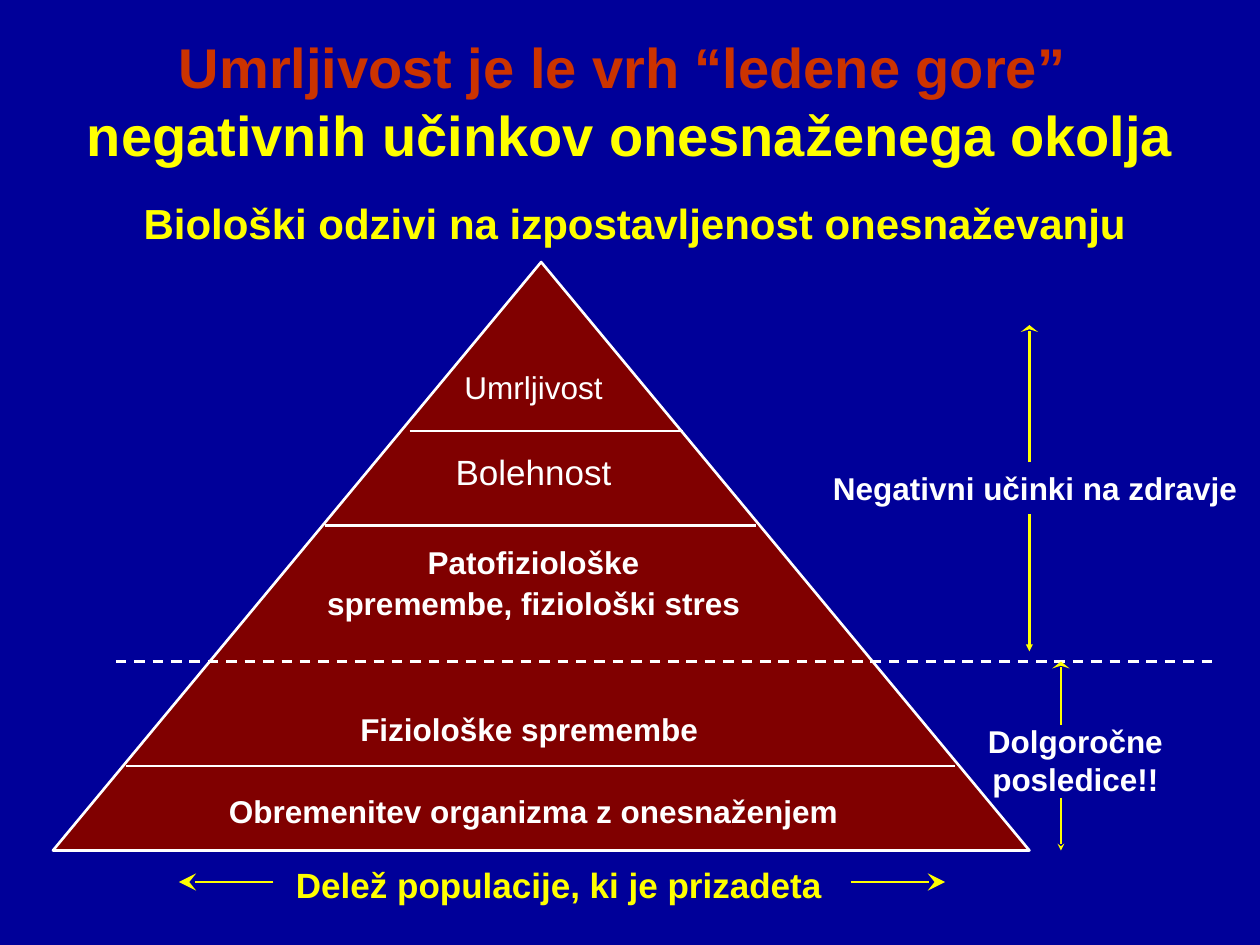
from dataclasses import dataclass

from lxml import etree
from pptx import Presentation
from pptx.dml.color import RGBColor
from pptx.enum.dml import MSO_LINE
from pptx.enum.shapes import MSO_CONNECTOR, MSO_SHAPE
from pptx.enum.text import MSO_ANCHOR, PP_ALIGN
from pptx.oxml.ns import qn
from pptx.util import Inches, Pt

CENTER, LEFT = PP_ALIGN.CENTER, PP_ALIGN.LEFT
TOP, MIDDLE = MSO_ANCHOR.TOP, MSO_ANCHOR.MIDDLE
TRIANGLE = MSO_SHAPE.ISOSCELES_TRIANGLE
STRAIGHT = MSO_CONNECTOR.STRAIGHT
DASH = MSO_LINE.DASH


@dataclass(frozen=True)
class Theme:
    font: str = "Arial"
    background: RGBColor = RGBColor(0x00, 0x00, 0x99)
    pyramid: RGBColor = RGBColor(0x80, 0x00, 0x00)
    accent: RGBColor = RGBColor(0xCC, 0x33, 0x00)
    yellow: RGBColor = RGBColor(0xFF, 0xFF, 0x00)
    white: RGBColor = RGBColor(0xFF, 0xFF, 0xFF)
    title: int = 32
    subtitle: int = 24
    large: int = 20
    body: int = 18
    line: float = 1.5


THEME = Theme()


@dataclass(frozen=True)
class Line:
    """One paragraph; gap is the space before it in points."""
    text: str
    size: int = THEME.body
    bold: bool = True
    gap: float = 0


@dataclass(frozen=True)
class Label:
    area: tuple[float, float, float, float]
    lines: list[Line]
    color: RGBColor = THEME.white
    align: PP_ALIGN = CENTER
    anchor: MSO_ANCHOR = TOP
    wrap: bool = False
    spacing: float = 1.0


@dataclass(frozen=True)
class Arrowhead:
    kind: str = "stealth"
    width: str = "sm"
    length: str = "sm"


@dataclass(frozen=True)
class Stroke:
    start: tuple[float, float]
    end: tuple[float, float]
    color: RGBColor = THEME.white
    head: Arrowhead | None = None
    dashed: bool = False


def add_label(slide, label: Label):
    box = slide.shapes.add_textbox(*map(Inches, label.area))
    frame = box.text_frame
    frame.word_wrap = label.wrap
    frame.vertical_anchor = label.anchor
    frame.text = "\n".join(line.text for line in label.lines)
    for para, line in zip(frame.paragraphs, label.lines):
        para.alignment = label.align
        para.line_spacing = label.spacing
        if line.gap:
            para.space_before = Pt(line.gap)
        for span in para.runs:
            span.font.name = THEME.font
            span.font.size = Pt(line.size)
            span.font.bold = line.bold
            span.font.color.rgb = label.color
    return box


def add_stroke(slide, stroke: Stroke) -> None:
    ends = map(Inches, stroke.start + stroke.end)
    connector = slide.shapes.add_connector(STRAIGHT, *ends)
    connector.line.color.rgb = stroke.color
    connector.line.width = Pt(THEME.line)
    if stroke.dashed:
        connector.line.dash_style = DASH
    if stroke.head:
        outline = connector.line._get_or_add_ln()
        etree.SubElement(outline, qn("a:tailEnd"), type=stroke.head.kind,
                         w=stroke.head.width, len=stroke.head.length)
    etree.SubElement(connector._element.spPr, qn("a:effectLst"))


def yellow_arrow(start: tuple[float, float], end: tuple[float, float],
                 head: Arrowhead) -> Stroke:
    return Stroke(start, end, THEME.yellow, head)


TITLE = Label((0.17, 0.17, 9.67, 1.25),
              [Line("Umrljivost je le vrh “ledene gore” \v"
                    "negativnih učinkov onesnaženega okolja", THEME.title)],
              THEME.yellow, anchor=MIDDLE, wrap=True)

LABELS = [
    # Pyramid levels, from the tip down
    Label((1.62, 2.84, 5.23, 3.8), [
        Line("Umrljivost", bold=False),
        Line("Bolehnost", THEME.large, bold=False, gap=23.4),
        Line("Patofiziološke", gap=26.4),
        Line("spremembe, fiziološki stres"),
        Line("Fiziološke spremembe ", gap=47.9),
        Line("Obremenitev organizma z onesnaženjem", gap=23.4),
    ], spacing=1.1),
    # Subtitle and base caption
    Label((0.5, 1.52, 9.17, 0.5),
          [Line("Biološki odzivi na izpostavljenost onesnaževanju ",
                THEME.subtitle)], THEME.yellow, wrap=True),
    Label((2.25, 6.77, 4.45, 0.5),
          [Line("Delež populacije, ki je prizadeta", THEME.large)],
          THEME.yellow, LEFT, MIDDLE),
    # Side notes
    Label((6.51, 3.67, 3.41, 0.4), [Line("Negativni učinki na zdravje")]),
    Label((7.74, 5.68, 1.59, 0.7),
          [Line("Dolgoročne"), Line("posledice!!")]),
]

LARGE_HEAD = Arrowhead(width="lg", length="lg")
WIDE_HEAD = Arrowhead(width="lg")
SMALL_HEAD = Arrowhead()
SOLID_HEAD = Arrowhead("triangle")

STROKES = [
    # Level dividers
    Stroke((3.25, 3.42), (5.42, 3.42)),
    Stroke((2.58, 4.17), (6, 4.17)),
    Stroke((0.92, 5.25), (9.67, 5.25), dashed=True),
    Stroke((1, 6.08), (7.58, 6.08)),
    # Arrows beside the base caption
    yellow_arrow((6.75, 7), (7.5, 7), LARGE_HEAD),
    yellow_arrow((2.17, 7), (1.42, 7), LARGE_HEAD),
    # Arrows around the side notes
    yellow_arrow((8.17, 4.08), (8.17, 5.17), SOLID_HEAD),
    yellow_arrow((8.17, 3.67), (8.17, 2.58), WIDE_HEAD),
    yellow_arrow((8.42, 5.75), (8.42, 5.25), WIDE_HEAD),
    yellow_arrow((8.42, 6.33), (8.42, 6.75), SMALL_HEAD),
]


def main() -> None:
    deck = Presentation()
    deck.slide_width, deck.slide_height = Inches(10), Inches(7.5)
    page = deck.slides.add_slide(deck.slide_layouts[6])
    page.background.fill.solid()
    page.background.fill.fore_color.rgb = THEME.background

    # Pyramid
    pyramid = page.shapes.add_shape(
        TRIANGLE, *map(Inches, (0.42, 2.08, 7.75, 4.67)))
    pyramid.shadow.inherit = False
    pyramid.fill.solid()
    pyramid.fill.fore_color.rgb = THEME.pyramid
    pyramid.line.color.rgb = THEME.white
    pyramid.line.width = Pt(THEME.line)

    # Title, with its first line in the accent colour
    title = add_label(page, TITLE)
    title.text_frame.paragraphs[0].runs[0].font.color.rgb = THEME.accent

    for label in LABELS:
        add_label(page, label)
    for stroke in STROKES:
        add_stroke(page, stroke)
    deck.save("out.pptx")


if __name__ == "__main__":
    main()
